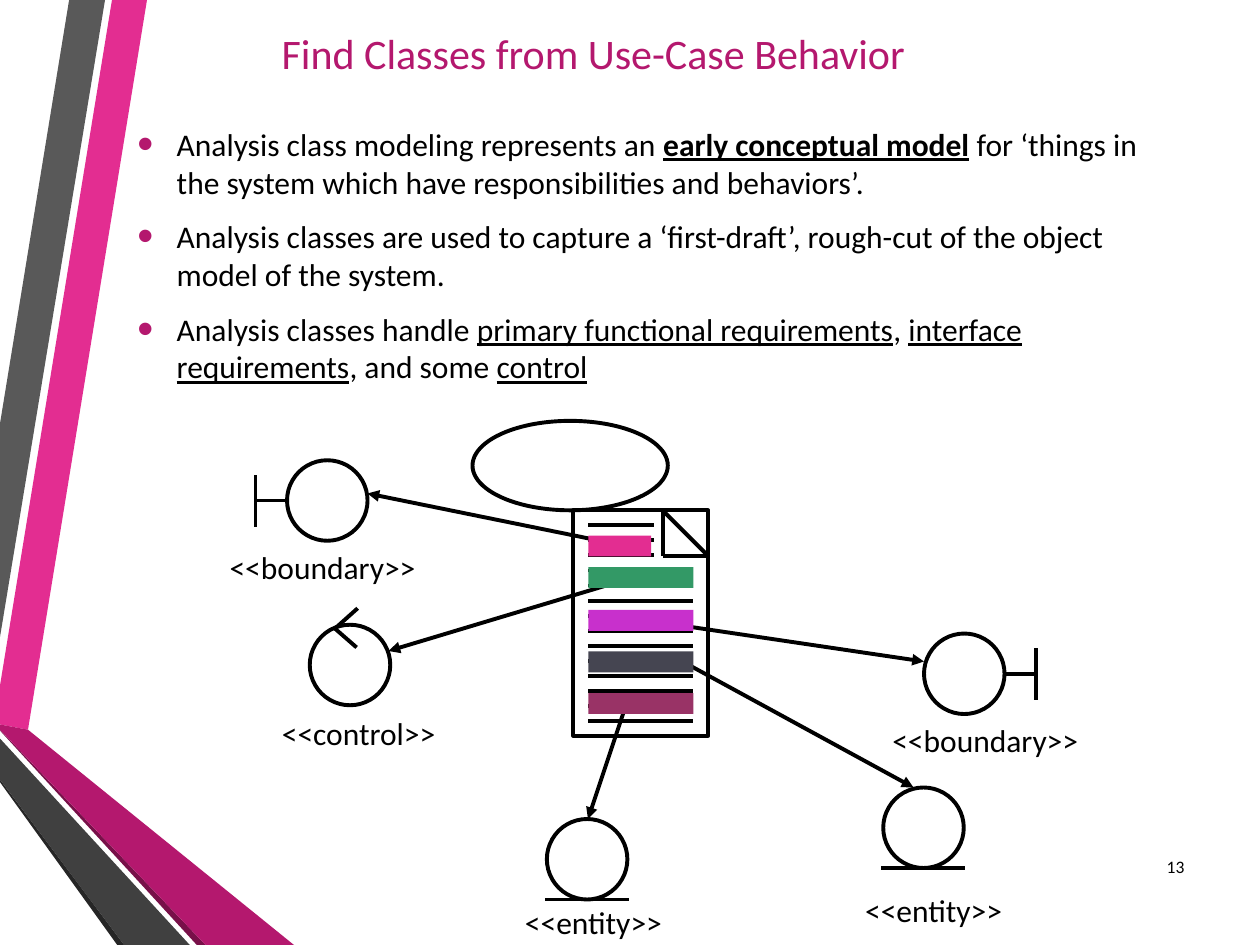
from lxml import etree
from pptx import Presentation
from pptx.dml.color import RGBColor
from pptx.enum.shapes import MSO_CONNECTOR, MSO_SHAPE
from pptx.enum.text import MSO_ANCHOR as ANCHOR, MSO_AUTO_SIZE as AUTO, PP_ALIGN as ALIGN
from pptx.oxml.ns import qn
from pptx.util import Pt

BLACK = RGBColor(0x00, 0x00, 0x00)
PINK = RGBColor(0xE3, 0x2D, 0x91)
MAGENTA = RGBColor(0xB4, 0x18, 0x6E)
PLUM = RGBColor(0x78, 0x10, 0x49)
GREY = RGBColor(0x59, 0x59, 0x59)
CHARCOAL = RGBColor(0x40, 0x40, 0x40)
DARK = RGBColor(0x26, 0x26, 0x26)
GREEN = RGBColor(0x33, 0x99, 0x66)
VIOLET = RGBColor(0xC8, 0x30, 0xCC)
SLATE = RGBColor(0x45, 0x45, 0x51)
BERRY = RGBColor(0x99, 0x33, 0x66)

FONT = "Calibri"
STROKE = 2.25
CIRCLE = 46
PAGE = (327.6, 291.6, 77, 128.9)

RIBBONS = [
    (PINK, [(0, 391.7), (0, 414), (16, 417), (84, 0), (64, 0)]),
    (GREY, [(60, 0), (39.5, 0), (0, 242), (0, 364)]),
    (DARK, [(0, 445.5), (0, 447), (67, 540), (71, 540)]),
    (PLUM, [(0, 417), (0, 417.5), (112.5, 540), (117.5, 540)]),
    (MAGENTA, [(0, 417), (117.5, 540), (168, 540), (16, 417), (0, 414)]),
    (CHARCOAL, [(0, 445.5), (71, 540), (108.5, 540), (0, 422)]),
]
BULLETS = [
    [("Analysis class modeling represents an ", False, False),
     ("early conceptual model", True, True),
     (" for ‘things in the system which have responsibilities and behaviors’.", False, False)],
    [("Analysis classes are used to capture a ‘first-draft’, rough-cut of the object "
      "model of the system.", False, False)],
    [("Analysis classes handle ", False, False),
     ("primary functional requirements", False, True),
     (", ", False, False),
     ("interface requirements", False, True),
     (", and some ", False, False),
     ("control", False, True)],
]
ARROWS = [
    ((360, 312.5), (210, 282)),
    ((366, 354), (528, 378)),
    ((360, 396), (336, 468)),
    ((390, 378), (522, 450)),
    ((360, 330.5), (222, 372)),
]
BARS = [(306, 36, PINK), (324, 60, GREEN), (348.5, 60, VIOLET),
        (372.2, 60, SLATE), (396, 60, BERRY)]
LABELS = [
    ("<<boundary>>", 126, 313.2, 116.6),
    ("<<boundary>>", 504.7, 411.8, 116.6),
    ("<<control>>", 157, 408.2, 95.8),
    ("<<entity>>", 296.6, 516.2, 85),
    ("<<entity>>", 491, 509, 85),
]


def place(sp, x, y, w, h):
    """Move a shape to a box in points."""
    sp.left, sp.top, sp.width, sp.height = Pt(x), Pt(y), Pt(w), Pt(h)


def add_run(p, text, size, color=BLACK, bold=False, underline=False):
    """Append one formatted run."""
    r = p.add_run()
    r.text = text
    r.font.name, r.font.size = FONT, Pt(size)
    r.font.bold, r.font.underline = bold, underline
    r.font.color.rgb = color


def add_line(s, start, end, arrow=False):
    """Draw a black line, with an arrowhead at its end if asked."""
    cx = s.shapes.add_connector(MSO_CONNECTOR.STRAIGHT, *map(Pt, (*start, *end)))
    cx.line.color.rgb = BLACK
    cx.line.width = Pt(STROKE)
    if arrow:
        etree.SubElement(cx.line._get_or_add_ln(), qn("a:tailEnd"), type="triangle")
    etree.SubElement(cx._element.spPr, qn("a:effectLst"))


def add_outline(s, kind, x, y, w, h):
    """Draw an unfilled preset shape with a black outline."""
    sp = s.shapes.add_shape(kind, Pt(x), Pt(y), Pt(w), Pt(h))
    sp.shadow.inherit = False
    sp.fill.background()
    sp.line.color.rgb = BLACK
    sp.line.width = Pt(STROKE)


def add_label(s, text, x, y, w, h, size, align, anchor=ANCHOR.TOP):
    """Place a single-line text box without insets."""
    tf = s.shapes.add_textbox(Pt(x), Pt(y), Pt(w), Pt(h)).text_frame
    tf.margin_left = tf.margin_right = tf.margin_top = tf.margin_bottom = 0
    tf.word_wrap, tf.vertical_anchor = False, anchor
    p = tf.paragraphs[0]
    p.alignment = align
    add_run(p, text, size)


def draw_ribbons(s):
    """Draw the folded ribbons along the left edge."""
    for color, points in RIBBONS:
        first, *rest = [(Pt(x), Pt(y)) for x, y in points]
        builder = s.shapes.build_freeform(*first)
        builder.add_line_segments(rest, close=True)
        sp = builder.convert_to_shape()
        sp.shadow.inherit = False
        sp.fill.solid()
        sp.fill.fore_color.rgb = color
        sp.line.fill.background()


def fill_title(sp, x, y, w, h):
    """Write the slide title."""
    place(sp, x, y, w, h)
    tf = sp.text_frame
    tf.auto_size, tf.vertical_anchor = AUTO.NONE, ANCHOR.MIDDLE
    p = tf.paragraphs[0]
    p.alignment, p.line_spacing = ALIGN.CENTER, 0.8
    add_run(p, "Find Classes from Use-Case Behavior", 24, MAGENTA)


def fill_body(sp, x, y, w, h):
    """Write the bulleted list."""
    place(sp, x, y, w, h)
    tf = sp.text_frame
    tf.auto_size, tf.vertical_anchor = AUTO.NONE, ANCHOR.MIDDLE
    tf.margin_bottom = Pt(32)
    for i, runs in enumerate(BULLETS):
        p = tf.add_paragraph() if i else tf.paragraphs[0]
        p.space_before, p.space_after = Pt(9.6 if i else 0), Pt(0)
        pPr = p._p.get_or_add_pPr()
        pPr.set("marL", str(Pt(22.5)))
        pPr.set("indent", str(Pt(-22.5)))
        color = etree.SubElement(pPr, qn("a:buClr"))
        etree.SubElement(color, qn("a:srgbClr"), val=str(MAGENTA))
        etree.SubElement(pPr, qn("a:buSzPct"), val="145000")
        etree.SubElement(pPr, qn("a:buChar"), char="•")
        for text, bold, underline in runs:
            add_run(p, text, 18, BLACK, bold, underline)


def draw_document(s, x, y, w, h):
    """Draw the use case and its page of text with a folded corner."""
    add_outline(s, MSO_SHAPE.OVAL, x - 57.6, y - 51.1, 111.6, 51.1)
    add_outline(s, MSO_SHAPE.RECTANGLE, x, y, w, h)
    fold = 26
    corner, top, side = (x + w - fold, y + fold), (x + w - fold, y), (x + w, y + fold)
    for start, end in ((top, side), (top, corner), (side, corner)):
        add_line(s, start, end)
    for i in range(14):
        line_y = y + 8.6 * (i + 1)
        add_line(s, (x + 8.6, line_y), (x + (46 if i < 3 else 68.4), line_y))


def draw_bars(s, x):
    """Draw the coloured highlights over the page text."""
    for y, w, color in BARS:
        sp = s.shapes.add_shape(MSO_SHAPE.RECTANGLE, Pt(x), Pt(y), Pt(w), Pt(12))
        sp.shadow.inherit = False
        sp.fill.solid()
        sp.fill.fore_color.rgb = color
        sp.line.fill.background()


def draw_boundary(s, x, y, side):
    """Draw a boundary icon whose bar is left (-1) or right (1) of the circle."""
    add_outline(s, MSO_SHAPE.OVAL, x, y, CIRCLE, CIRCLE)
    edge = x + CIRCLE if side > 0 else x
    bar = edge + 18 * side
    add_line(s, (bar, y + 8.5), (bar, y + 38))
    add_line(s, (edge, y + CIRCLE / 2), (bar, y + CIRCLE / 2))


def draw_control(s, x, y):
    """Draw a control icon with its open arrowhead."""
    add_outline(s, MSO_SHAPE.OVAL, x, y, CIRCLE, CIRCLE)
    for dx, dy in ((27.4, -9.4), (26.8, 13)):
        add_line(s, (x + 14.4, y + 2.2), (x + dx, y + dy))


def draw_entity(s, x, y):
    """Draw an entity icon standing on its base line."""
    add_outline(s, MSO_SHAPE.OVAL, x, y, CIRCLE, CIRCLE)
    add_line(s, (x - 1, y + CIRCLE), (x + CIRCLE + 1, y + CIRCLE))


def main():
    """Build and save the slide."""
    prs = Presentation()
    prs.slide_width, prs.slide_height = Pt(720), Pt(540)
    s = prs.slides.add_slide(prs.slide_layouts[1])
    draw_ribbons(s)
    fill_body(s.placeholders[1], 71.3, 23.8, 607, 272.2)
    fill_title(s.shapes.title, 0, 23.8, 678.2, 18)
    add_label(s, "13", 650, 481, 26.8, 28.8, 10, ALIGN.RIGHT, ANCHOR.MIDDLE)
    draw_document(s, *PAGE)
    for start, end in ARROWS:
        add_line(s, start, end, arrow=True)
    draw_bars(s, PAGE[0] + 8.6)
    draw_boundary(s, 164, 263, -1)
    draw_control(s, 177, 357)
    draw_entity(s, 312.5, 468)
    draw_entity(s, 504.7, 450)
    draw_boundary(s, 528, 362, 1)
    for text, x, y, w in LABELS:
        add_label(s, text, x, y, w, 21.6, 18, ALIGN.CENTER)
    prs.save("out.pptx")


if __name__ == "__main__":
    main()
